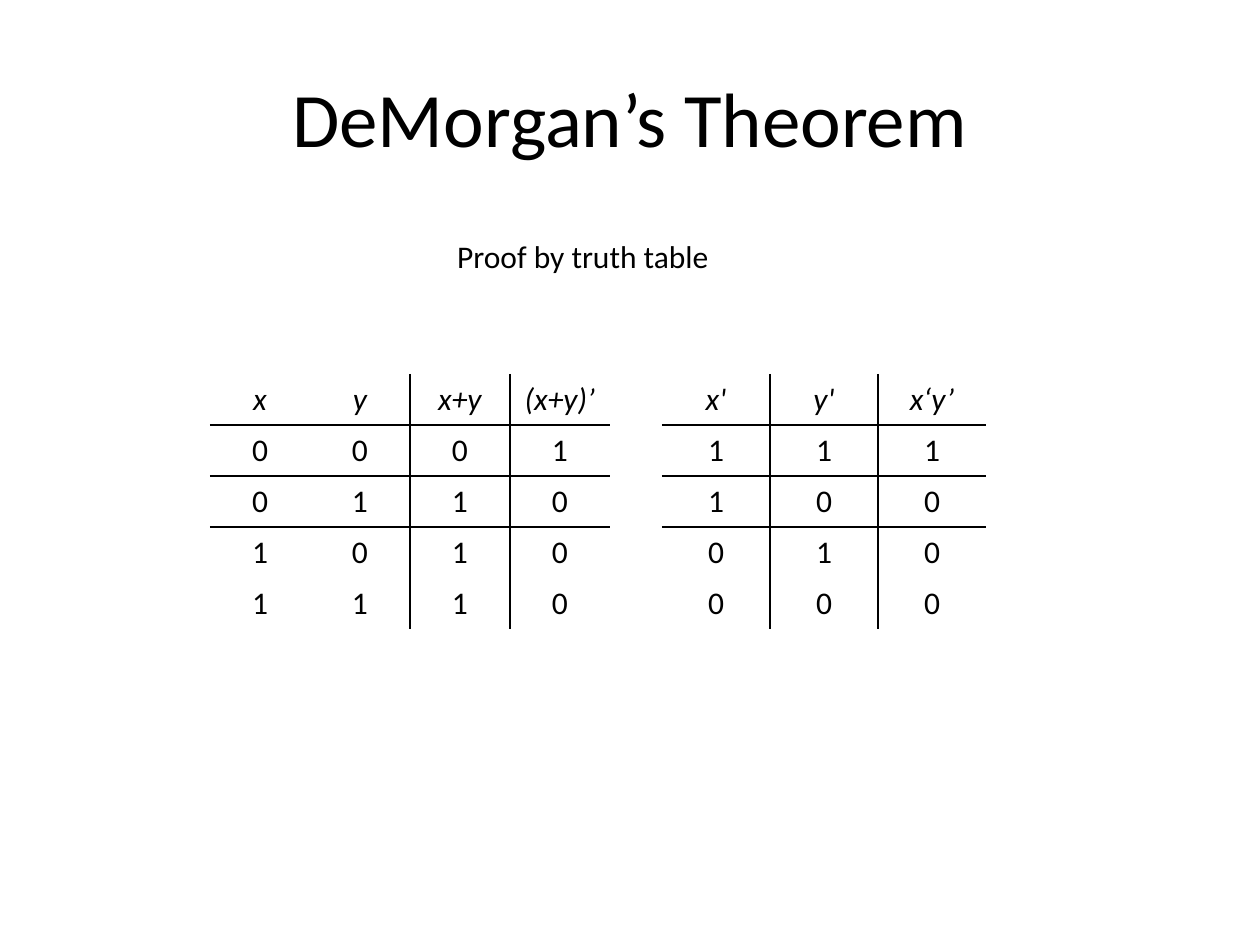
from dataclasses import dataclass

from lxml import etree
from pptx import Presentation
from pptx import util as u
from pptx.dml.color import RGBColor
from pptx.enum import text
from pptx.oxml import ns

PX = 914400 / 126


@dataclass(frozen=True)
class Theme:
    font: str = "Calibri"
    ink: str = "000000"
    title: int = 44
    body: int = 18
    rule: int = 1


theme = Theme()
NO_GRID_STYLE = "{2D5ABB26-0587-4C30-8999-92F81FD0307C}"


def write(tf, words, size, italic=False):
    tf.vertical_anchor = text.MSO_ANCHOR.TOP
    p = tf.paragraphs[0]
    p.text = words
    p.alignment = text.PP_ALIGN.CENTER
    p.font.name = theme.font
    p.font.size = u.Pt(size)
    p.font.italic = italic
    p.font.color.rgb = RGBColor.from_string(theme.ink)


def rule_cell(cell, sides):
    """Draw cell borders; sides is a subset of L, R, T, B in that order."""
    tc_pr = cell._tc.get_or_add_tcPr()
    for side in sides:
        ln = etree.SubElement(tc_pr, ns.qn(f"a:ln{side}"), w=str(u.Pt(theme.rule)))
        fill = etree.SubElement(ln, ns.qn("a:solidFill"))
        etree.SubElement(fill, ns.qn("a:srgbClr"), val=theme.ink)


prs = Presentation()
prs.slide_width, prs.slide_height = u.Inches(10), u.Inches(7.5)
s = prs.slides.add_slide(prs.slide_layouts[6])

# Headings: wording, box in px, type size, anchor
headings = [
    ("DeMorgan’s Theorem", (63, 38, 1134, 157), theme.title, text.MSO_ANCHOR.MIDDLE),
    ("Proof by truth table", (336, 231, 494, 50), theme.body, text.MSO_ANCHOR.TOP),
]
for words, box, size, anchor in headings:
    tf = s.shapes.add_textbox(*(round(v * PX) for v in box)).text_frame
    tf.word_wrap = True
    write(tf, words, size)
    tf.vertical_anchor = anchor

# Truth tables: left and column width in px, columns with a rule on their right, rows
TABLE_TOP, ROW_HEIGHT = 374, 51
RULED_ROWS = (0, 1)
truth_tables = [
    (210, 100, (1, 2), [["x", "y", "x+y", "(x+y)’"],
                        "0001", "0110", "1010", "1110"]),
    (662, 108, (0, 1), [["x'", "y'", "x‘y’"],
                        "111", "100", "010", "000"]),
]
for left, col_width, ruled_cols, rows in truth_tables:
    n_rows, n_cols = len(rows), len(rows[0])
    box = (left, TABLE_TOP, col_width * n_cols, ROW_HEIGHT * n_rows)
    table = s.shapes.add_table(n_rows, n_cols, *(round(v * PX) for v in box)).table
    table.first_row = table.horz_banding = False
    table._tbl.tblPr.find(ns.qn("a:tableStyleId")).text = NO_GRID_STYLE
    for i, row in enumerate(rows):
        for j, value in enumerate(row):
            cell = table.cell(i, j)
            write(cell.text_frame, value, theme.body, italic=i == 0)
            edges = {"L": j - 1 in ruled_cols, "R": j in ruled_cols,
                     "T": i - 1 in RULED_ROWS, "B": i in RULED_ROWS}
            rule_cell(cell, [side for side, ruled in edges.items() if ruled])
            cell.fill.background()

prs.save("out.pptx")
